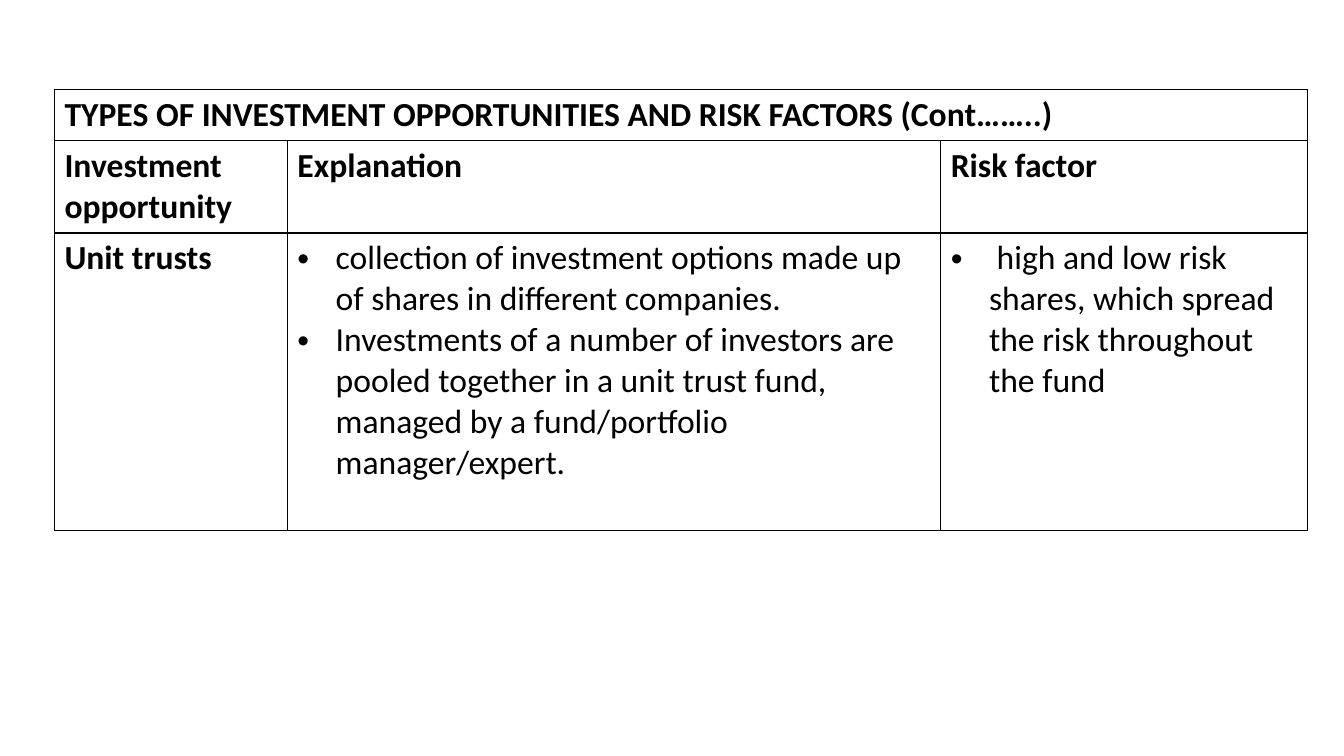
from lxml.etree import SubElement
from pptx import Presentation
from pptx.dml.color import RGBColor
from pptx.oxml.ns import qn
from pptx.util import Inches, Pt

BLACK = "000000"
WHITE = "FFFFFF"
COLUMN_WIDTHS = [2.31, 6.48, 3.64]
ROW_HEIGHTS = [0.5, 0.91, 2.95]
TITLE = "TYPES OF INVESTMENT OPPORTUNITIES AND RISK FACTORS (Cont……..)"
HEADINGS = ["Investment opportunity", "Explanation", "Risk factor"]
OPPORTUNITY = "Unit trusts"
EXPLANATION = [
    "collection of investment options made up of shares in different companies.",
    "Investments of a number of investors are pooled together in a unit trust fund, "
    "managed by a fund/portfolio manager/expert.",
]
RISK = [" high and low risk shares, which spread the risk throughout the fund"]


def color(value):
    return RGBColor.from_string(value)


def add_bullet(paragraph, indent=0.38):
    properties = paragraph._p.get_or_add_pPr()
    properties.set("marL", str(Inches(indent)))
    properties.set("indent", str(-Inches(indent)))
    SubElement(properties, qn("a:buFont"), typeface="Arial")
    SubElement(properties, qn("a:buChar"), char="•")


def write_text(paragraph, text, size=24, bold=False, bullet=False, font="Calibri", fill=BLACK):
    if bullet:
        add_bullet(paragraph)
    run = paragraph.add_run()
    run.text = text
    run.font.name = font
    run.font.size = Pt(size)
    run.font.bold = bold
    run.font.color.rgb = color(fill)


def write_cell(cell, texts, **text_format):
    frame = cell.text_frame
    for index, text in enumerate(texts):
        paragraph = frame.add_paragraph() if index else frame.paragraphs[0]
        write_text(paragraph, text, **text_format)


def style_cell(cell, border=BLACK, width=1):
    properties = cell._tc.get_or_add_tcPr()
    for side in ("lnL", "lnR", "lnT", "lnB"):
        line = SubElement(properties, qn(f"a:{side}"), w=str(Pt(width)))
        line_fill = SubElement(line, qn("a:solidFill"))
        SubElement(line_fill, qn("a:srgbClr"), val=border)
    cell.fill.solid()
    cell.fill.fore_color.rgb = color(WHITE)


def add_investment_table(slide, left, top, width, height):
    shape = slide.shapes.add_table(
        len(ROW_HEIGHTS), len(COLUMN_WIDTHS),
        Inches(left), Inches(top), Inches(width), Inches(height),
    )
    table = shape.table
    for column, share in zip(table.columns, COLUMN_WIDTHS):
        column.width = Inches(width * share / sum(COLUMN_WIDTHS))
    for row, share in zip(table.rows, ROW_HEIGHTS):
        row.height = Inches(height * share / sum(ROW_HEIGHTS))
    for cell in table.iter_cells():
        style_cell(cell)

    title = table.cell(0, 0)
    title.merge(table.cell(0, len(COLUMN_WIDTHS) - 1))
    write_cell(title, [TITLE], bold=True)
    for index, heading in enumerate(HEADINGS):
        write_cell(table.cell(1, index), [heading], bold=True)
    write_cell(table.cell(2, 0), [OPPORTUNITY], bold=True)
    write_cell(table.cell(2, 1), EXPLANATION, bullet=True)
    write_cell(table.cell(2, 2), RISK, bullet=True)


def main():
    presentation = Presentation()
    presentation.slide_width = Inches(13.33)
    presentation.slide_height = Inches(7.5)
    slide = presentation.slides.add_slide(presentation.slide_layouts[6])
    add_investment_table(slide, 0.54, 0.89, sum(COLUMN_WIDTHS), sum(ROW_HEIGHTS))
    presentation.save("out.pptx")


if __name__ == "__main__":
    main()
